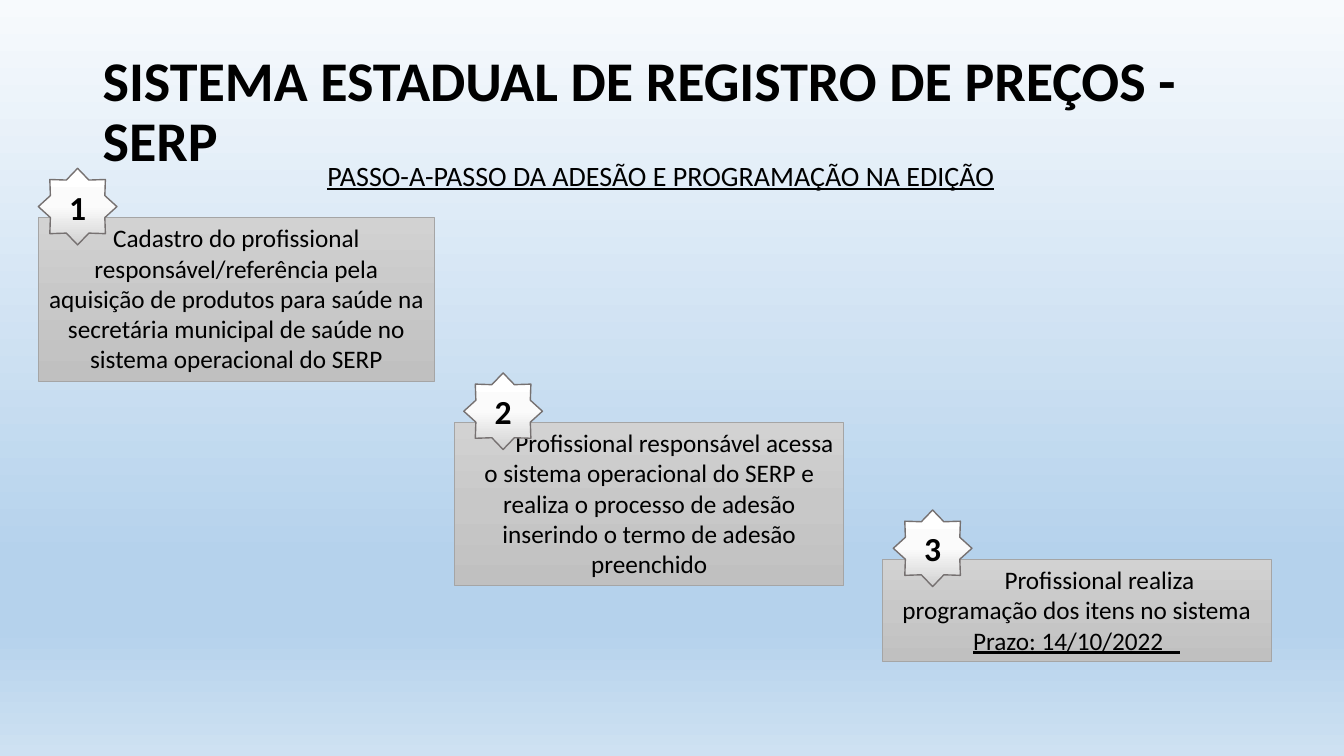
from dataclasses import dataclass

from lxml.etree import SubElement
from pptx import Presentation
from pptx.dml.color import RGBColor
from pptx.dml.fill import FillFormat
from pptx.enum.shapes import MSO_SHAPE
from pptx.enum.text import MSO_ANCHOR, PP_ALIGN
from pptx.oxml.ns import qn
from pptx.oxml.xmlchemy import BaseOxmlElement
from pptx.shapes.autoshape import Shape
from pptx.slide import Slide
from pptx.text.text import TextFrame, _Paragraph
from pptx.util import Inches, Pt

FONT = "Calibri"
BLACK = "000000"
SKY = ((0, "F7FAFD"), (74, "B5D2EC"), (83, "B5D2EC"), (100, "CEE1F2"))
GREY = ((0, "D2D2D2"), (50, "C8C8C8"), (100, "C0C0C0"))
SILVER = ((0, "FFFFFF"), (50, "FBFBFB"), (100, "D1D1D1"))
BADGE_SIZE = (0.78, 0.76)
BADGE_RISE = 0.49  # how far a badge stands above its box

Stops = tuple[tuple[int, str], ...]
Box = tuple[float, float, float, float]


@dataclass(frozen=True)
class Step:
    box: Box
    badge_offset: float
    text: str
    indent: float = 0
    deadline: str = ""


STEPS = (
    Step((0.38, 2.16, 3.93, 1.62), 0,
         "Cadastro do profissional responsável/referência pela aquisição de produtos "
         "para saúde na secretária municipal de saúde no sistema operacional do SERP"),
    Step((4.51, 4.19, 3.86, 1.62), 0.09,
         "Profissional responsável acessa o sistema operacional do SERP e realiza o "
         "processo de adesão inserindo o termo de adesão preenchido", indent=0.5),
    Step((8.75, 5.55, 3.86, 1.01), 0.11,
         "Profissional realiza programação dos itens no sistema", indent=0.45,
         deadline="Prazo: 14/10/2022   "),
)


def rgb(color: str) -> RGBColor:
    return RGBColor.from_string(color)


def fill_downwards(fill: FillFormat, owner: BaseOxmlElement, stops: Stops) -> None:
    """Give the fill inside owner a top-to-bottom gradient with any number of stops."""
    fill.gradient()
    fill.gradient_angle = 270
    stop_list = owner.find(".//" + qn("a:gsLst"))
    for old_stop in list(stop_list):
        stop_list.remove(old_stop)
    for percent, color in stops:
        stop = SubElement(stop_list, qn("a:gs"), pos=str(percent * 1000))
        SubElement(stop, qn("a:srgbClr"), val=color)


def write(paragraph: _Paragraph, text: str, *, size: float, bold: bool = False,
          underline: bool = False, align: PP_ALIGN = PP_ALIGN.LEFT,
          spacing: float = 1.0, indent: float = 0) -> None:
    paragraph.alignment = align
    paragraph.line_spacing = spacing
    if indent:
        properties = paragraph._p.get_or_add_pPr()
        properties.set("marL", "0")
        properties.set("indent", str(Inches(indent)))
    run = paragraph.add_run()
    run.text = text
    run.font.name = FONT
    run.font.size = Pt(size)
    run.font.bold = bold
    run.font.underline = underline
    run.font.color.rgb = rgb(BLACK)


def add_frame(slide: Slide, box: Box, anchor: MSO_ANCHOR) -> TextFrame:
    frame = slide.shapes.add_textbox(*map(Inches, box)).text_frame
    frame.word_wrap = True
    frame.vertical_anchor = anchor
    return frame


def add_panel(slide: Slide, kind: MSO_SHAPE, box: Box, stops: Stops,
              line_color: str, line_width: float, anchor: MSO_ANCHOR) -> Shape:
    panel = slide.shapes.add_shape(kind, *map(Inches, box))
    panel.shadow.inherit = False
    fill_downwards(panel.fill, panel.element, stops)
    panel.line.color.rgb = rgb(line_color)
    panel.line.width = Pt(line_width)
    panel.text_frame.vertical_anchor = anchor
    return panel


def add_step(slide: Slide, number: int, step: Step) -> None:
    frame = add_panel(slide, MSO_SHAPE.RECTANGLE, step.box, GREY, "A5A5A5", 0.5,
                      MSO_ANCHOR.TOP).text_frame
    write(frame.paragraphs[0], step.text, size=18, align=PP_ALIGN.CENTER,
          indent=step.indent)
    if step.deadline:
        write(frame.add_paragraph(), step.deadline, size=18, underline=True,
              align=PP_ALIGN.CENTER)

    left, top = step.box[:2]
    badge_box = (left + step.badge_offset, top - BADGE_RISE, *BADGE_SIZE)
    badge = add_panel(slide, MSO_SHAPE.STAR_8_POINT, badge_box, SILVER, "767171", 1,
                      MSO_ANCHOR.MIDDLE)
    write(badge.text_frame.paragraphs[0], str(number), size=24, bold=True,
          align=PP_ALIGN.CENTER)


def main() -> None:
    presentation = Presentation()
    presentation.slide_width = Inches(13.33)
    presentation.slide_height = Inches(7.5)
    slide = presentation.slides.add_slide(presentation.slide_layouts[6])
    fill_downwards(slide.background.fill, slide.element, SKY)

    title = add_frame(slide, (0.92, 0.4, 11.96, 1.45), MSO_ANCHOR.MIDDLE)
    write(title.paragraphs[0], "SISTEMA ESTADUAL DE REGISTRO DE PREÇOS - SERP",
          size=40, bold=True, spacing=0.9)
    subtitle = add_frame(slide, (3.15, 1.52, 7.86, 0.44), MSO_ANCHOR.TOP)
    write(subtitle.paragraphs[0], "PASSO-A-PASSO DA ADESÃO E PROGRAMAÇÃO NA EDIÇÃO",
          size=20, underline=True)

    for number, step in enumerate(STEPS, start=1):
        add_step(slide, number, step)
    presentation.save("out.pptx")


if __name__ == "__main__":
    main()
